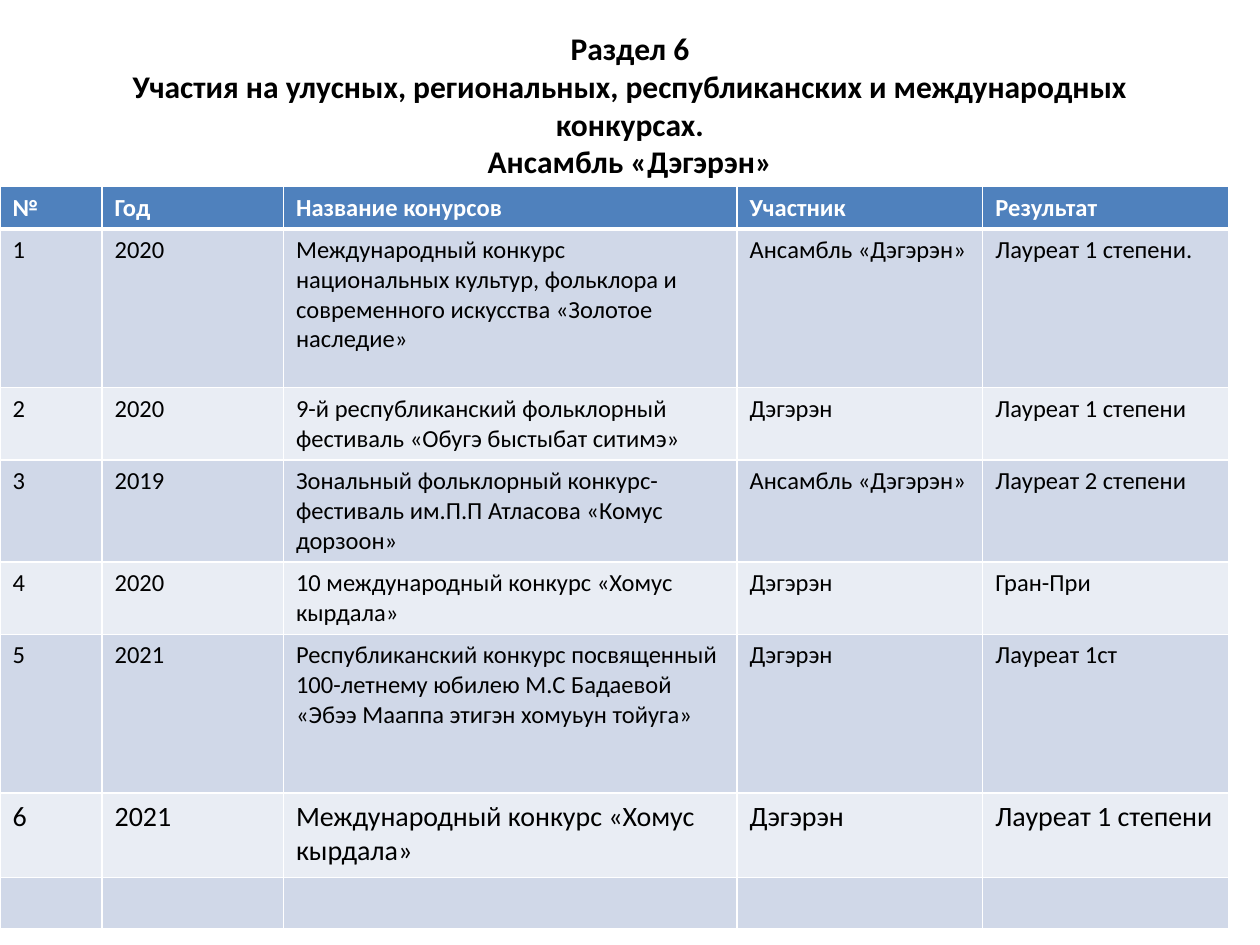
import pptx
import pptx.dml.color
import pptx.enum.text
import pptx.oxml.ns
import pptx.util
from dataclasses import dataclass
from lxml import etree

# Content
TITLE_LINES = [
    "Раздел 6",
    "Участия на улусных, региональных, республиканских и международных конкурсах.",
    "Ансамбль «Дэгэрэн»",
]
HEADER = ("№", "Год", "Название конурсов", "Участник", "Результат")
CONTESTS = [
    ("1", "2020", "Международный конкурс национальных культур, фольклора и "
     "современного искусства «Золотое наследие»", "Ансамбль «Дэгэрэн»", "Лауреат 1 степени."),
    ("2", "2020", "9-й республиканский фольклорный фестиваль «Обугэ быстыбат ситимэ»",
     "Дэгэрэн", "Лауреат 1 степени"),
    ("3", "2019", "Зональный фольклорный конкурс-фестиваль им.П.П Атласова «Комус дорзоон»",
     "Ансамбль «Дэгэрэн»", "Лауреат 2 степени"),
    ("4", "2020", "10 международный конкурс «Хомус кырдала»", "Дэгэрэн", "Гран-При"),
    ("5", "2021", "Республиканский конкурс посвященный 100-летнему юбилею М.С Бадаевой "
     "«Эбээ Мааппа этигэн хомуьун тойуга»", "Дэгэрэн", "Лауреат 1ст"),
    ("6", "2021", "Международный конкурс «Хомус кырдала»", "Дэгэрэн", "Лауреат 1 степени"),
    ("",) * len(HEADER),
]
LARGE_ROW = 6

# Layout in inches
SLIDE_WIDTH, SLIDE_HEIGHT = 10, 7.5
MARGIN = SLIDE_WIDTH * 0.05
TITLE_TOP, TITLE_HEIGHT, TITLE_BOTTOM_INSET = 0.3, 1.34, 0.28
TABLE_TOP = 1.48
COLUMN_WIDTHS = (0.81, 1.44, 3.6, 1.95, 1.95)
ROW_HEIGHTS = (0.33, 1.26, 0.57, 0.8, 0.57, 1.26, 0.67, 0.4)


@dataclass(frozen=True)
class Theme:
    font: str = "Calibri"
    text: str = "000000"
    white: str = "FFFFFF"
    header: str = "4F81BD"
    bands: tuple = ("D0D8E8", "E9EDF4")
    title_size: int = 18
    body_size: int = 14
    large_size: int = 16
    thin_line: int = 1
    thick_line: int = 3


THEME = Theme()
inches = pptx.util.Inches


def color(value):
    return pptx.dml.color.RGBColor.from_string(value)


def add_run(paragraph, text, size, text_color, bold):
    run = paragraph.add_run()
    run.text = text
    run.font.name = THEME.font
    run.font.size = pptx.util.Pt(size)
    run.font.bold = bold
    run.font.color.rgb = color(text_color)


def set_borders(cell, bottom_width):
    properties = cell._tc.get_or_add_tcPr()
    widths = {"lnL": THEME.thin_line, "lnR": THEME.thin_line,
              "lnT": THEME.thin_line, "lnB": bottom_width}
    # Borders come before the fill in the cell properties
    for position, (tag, width) in enumerate(widths.items()):
        line = etree.Element(pptx.oxml.ns.qn(f"a:{tag}"), w=str(pptx.util.Pt(width)))
        fill = etree.SubElement(line, pptx.oxml.ns.qn("a:solidFill"))
        etree.SubElement(fill, pptx.oxml.ns.qn("a:srgbClr"), val=THEME.white)
        properties.insert(position, line)


def add_title(slide):
    title = slide.shapes.title
    title.left, title.top = inches(MARGIN), inches(TITLE_TOP)
    title.width, title.height = inches(SLIDE_WIDTH - 2 * MARGIN), inches(TITLE_HEIGHT)
    frame = title.text_frame
    frame.word_wrap = True
    frame.auto_size = pptx.enum.text.MSO_AUTO_SIZE.NONE
    frame.vertical_anchor = pptx.enum.text.MSO_ANCHOR.MIDDLE
    frame.margin_top, frame.margin_bottom = 0, inches(TITLE_BOTTOM_INSET)
    paragraph = frame.paragraphs[0]
    paragraph.alignment = pptx.enum.text.PP_ALIGN.CENTER
    for number, line in enumerate(TITLE_LINES):
        if number:
            paragraph.add_line_break()
        add_run(paragraph, line, THEME.title_size, THEME.text, True)


def add_contest_table(slide):
    rows = [HEADER, *CONTESTS]
    table = slide.shapes.add_table(
        len(rows), len(HEADER), 0, inches(TABLE_TOP),
        inches(sum(COLUMN_WIDTHS)), inches(sum(ROW_HEIGHTS))).table
    for column, width in zip(table.columns, COLUMN_WIDTHS):
        column.width = inches(width)
    for row, height in zip(table.rows, ROW_HEIGHTS):
        row.height = inches(height)

    for row_number, values in enumerate(rows):
        is_header = row_number == 0
        fill = THEME.header if is_header else THEME.bands[(row_number - 1) % 2]
        text_color = THEME.white if is_header else THEME.text
        size = THEME.large_size if row_number == LARGE_ROW else THEME.body_size
        for column_number, value in enumerate(values):
            cell = table.cell(row_number, column_number)
            cell.fill.solid()
            cell.fill.fore_color.rgb = color(fill)
            set_borders(cell, THEME.thick_line if is_header else THEME.thin_line)
            if value:
                add_run(cell.text_frame.paragraphs[0], value, size, text_color, is_header)


def main():
    presentation = pptx.Presentation()
    presentation.slide_width = inches(SLIDE_WIDTH)
    presentation.slide_height = inches(SLIDE_HEIGHT)
    slide = presentation.slides.add_slide(presentation.slide_layouts.get_by_name("Title Only"))
    add_title(slide)
    add_contest_table(slide)
    presentation.save("out.pptx")


if __name__ == "__main__":
    main()
